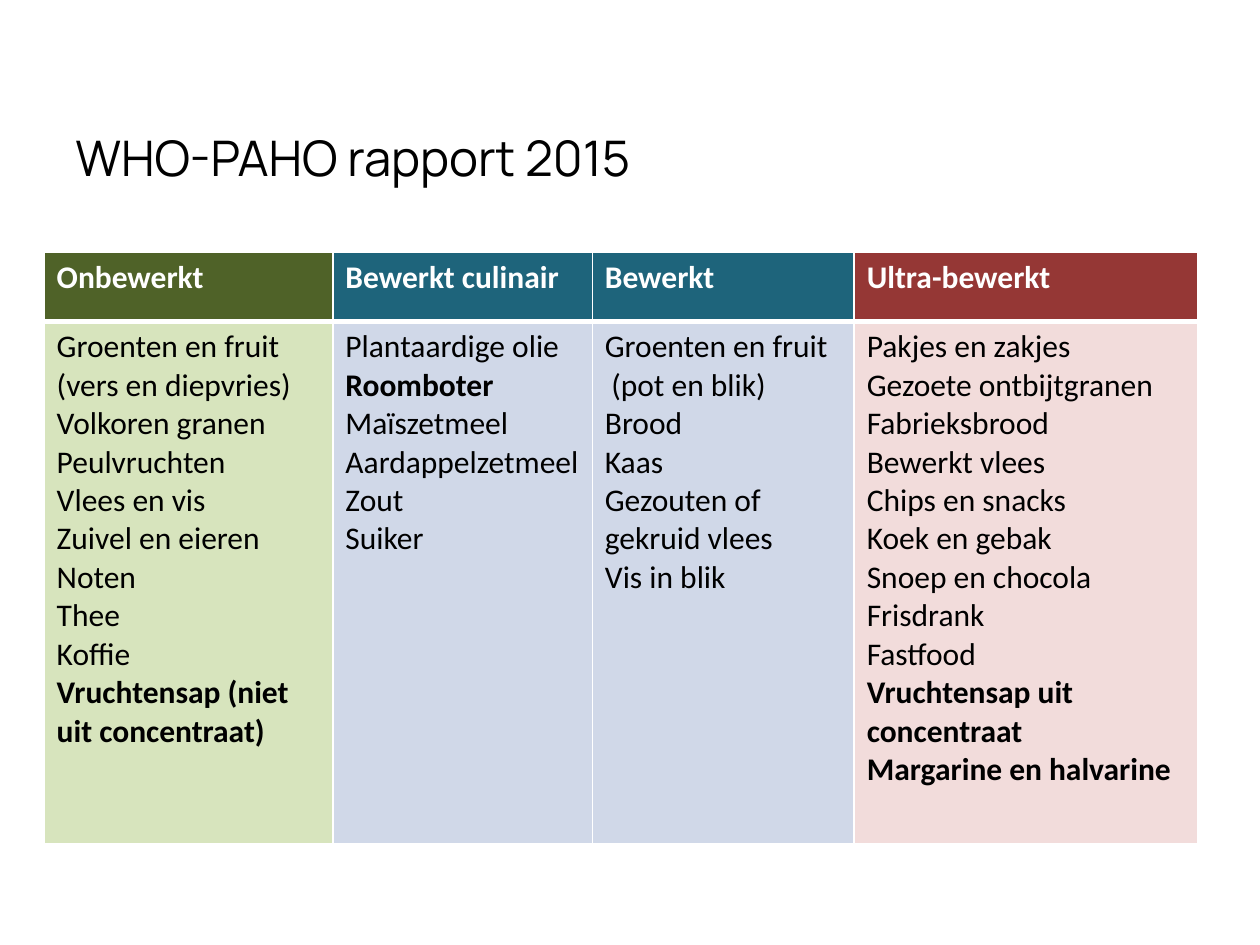
from dataclasses import dataclass

from lxml.etree import SubElement
from pptx import Presentation
from pptx.dml.color import RGBColor as RGB
from pptx.enum.text import MSO_ANCHOR as Anchor
from pptx.oxml.ns import qn
from pptx.util import Cm, Pt


@dataclass(frozen=True)
class Theme:
    title_font: str = "Manrope"
    body_font: str = "Calibri"
    title_size: int = 28
    body_size: int = 18
    black: str = "000000"
    white: str = "FFFFFF"
    olive: str = "4F6228"
    teal: str = "1E647B"
    red: str = "953735"
    pale_green: str = "D7E4BD"
    pale_blue: str = "D0D8E8"
    pale_red: str = "F2DCDB"
    thin: int = 1
    thick: int = 3


T = Theme()

TITLE_BOX = (1.27, 2.44, 18.26, 2.44)
TABLE_BOX = (0.89, 5.08, 23.26, 11.94)
COLUMN_WIDTHS = (5.82, 5.23, 5.28, 6.93)
HEADER_HEIGHT = 1.4
HANGING = Cm(0.13)

# Heading, heading fill, body fill, foods, foods in bold
CATEGORIES = [
    ("Onbewerkt", T.olive, T.pale_green,
     ["Groenten en fruit", "(vers en diepvries)", "Volkoren granen",
      "Peulvruchten", "Vlees en vis", "Zuivel en eieren", "Noten", "Thee",
      "Koffie", "Vruchtensap (niet uit concentraat)"],
     {"Vruchtensap (niet uit concentraat)"}),
    ("Bewerkt culinair", T.teal, T.pale_blue,
     ["Plantaardige olie", "Roomboter", "Maïszetmeel", "Aardappelzetmeel",
      "Zout", "Suiker"],
     {"Roomboter"}),
    ("Bewerkt", T.teal, T.pale_blue,
     ["Groenten en fruit (pot en blik)", "Brood", "Kaas",
      "Gezouten of gekruid vlees", "Vis in blik"],
     set()),
    ("Ultra-bewerkt", T.red, T.pale_red,
     ["Pakjes en zakjes", "Gezoete ontbijtgranen", "Fabrieksbrood",
      "Bewerkt vlees", "Chips en snacks", "Koek en gebak",
      "Snoep en chocola", "Frisdrank", "Fastfood",
      "Vruchtensap uit concentraat", "Margarine en halvarine"],
     {"Vruchtensap uit concentraat", "Margarine en halvarine"}),
]


def add_run(p, text, font, size, color, bold=False):
    r = p.add_run()
    r.text = text
    r.font.name = font
    r.font.size = Pt(size)
    r.font.bold = bold
    r.font.color.rgb = RGB.from_string(color)


def set_borders(cell, **widths):
    tc_pr = cell._tc.get_or_add_tcPr()
    for side in "LRTB":
        ln = SubElement(tc_pr, qn(f"a:ln{side}"), w=str(Pt(widths.get(side, T.thin))))
        fill = SubElement(ln, qn("a:solidFill"))
        SubElement(fill, qn("a:srgbClr"), val=T.white)


def fill_cell(cell, lines, color, fill, bold_lines, **borders):
    set_borders(cell, **borders)
    cell.fill.solid()
    cell.fill.fore_color.rgb = RGB.from_string(fill)
    tf = cell.text_frame
    for i, line in enumerate(lines):
        p = tf.add_paragraph() if i else tf.paragraphs[0]
        # The wrapped "(pot en blik)" hangs slightly inward
        if line.endswith("(pot en blik)"):
            p_pr = p._p.get_or_add_pPr()
            p_pr.set("marL", str(HANGING))
            p_pr.set("indent", str(-HANGING))
        add_run(p, line, T.body_font, T.body_size, color, line in bold_lines)


def add_title(s, box, text):
    tf = s.shapes.add_textbox(*map(Cm, box)).text_frame
    tf.word_wrap = True
    tf.vertical_anchor = Anchor.TOP
    add_run(tf.paragraphs[0], text, T.title_font, T.title_size, T.black)


def add_food_table(s, box, categories):
    frame = s.shapes.add_table(2, len(categories), *map(Cm, box))
    table = frame.table
    table.rows[0].height = Cm(HEADER_HEIGHT)
    table.rows[1].height = Cm(box[3] - HEADER_HEIGHT)
    for col, (width, category) in enumerate(zip(COLUMN_WIDTHS, categories)):
        heading, dark, pale, foods, bold_foods = category
        table.columns[col].width = Cm(width)
        fill_cell(table.cell(0, col), [heading], T.white, dark, {heading}, B=T.thick)
        fill_cell(table.cell(1, col), foods, T.black, pale, bold_foods, T=T.thick)


def main():
    prs = Presentation()
    prs.slide_width, prs.slide_height = Cm(25.4), Cm(19.05)
    s = prs.slides.add_slide(prs.slide_layouts[6])
    add_title(s, TITLE_BOX, "WHO-PAHO rapport 2015")
    add_food_table(s, TABLE_BOX, CATEGORIES)
    prs.save("out.pptx")


if __name__ == "__main__":
    main()
